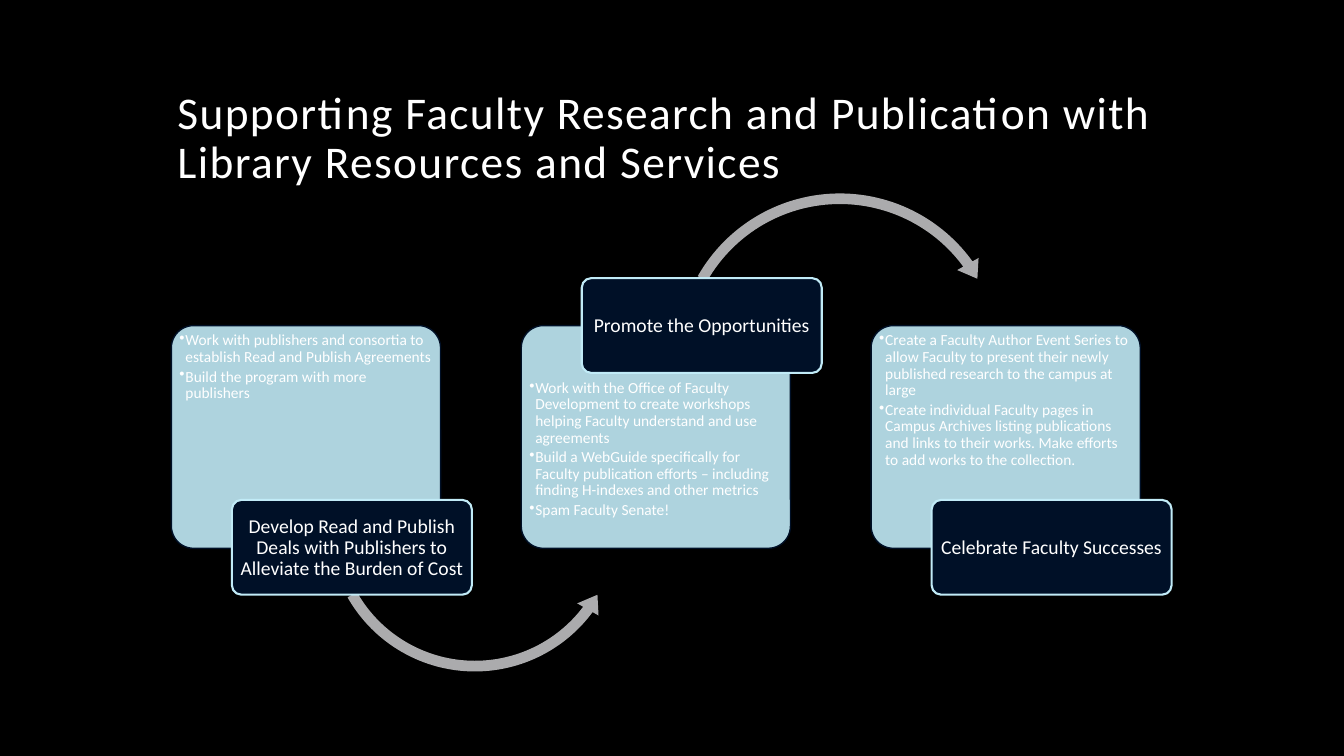
from lxml import etree
from pptx import Presentation
from pptx import util as u
from pptx.dml.color import RGBColor
from pptx.enum import shapes, text
from pptx.oxml.ns import qn

Shape = shapes.MSO_SHAPE
STEPS = [
    ("Develop Read and Publish Deals with Publishers to Alleviate the Burden of Cost",
     ["Work with publishers and consortia to establish Read and Publish Agreements",
      "Build the program with more publishers"],
     (Shape.LEFT_CIRCULAR_ARROW, (3.19, 3.69, 3.04, 3.04),
      (0.035, 4.277, 22.032, 90.245, 0.04))),
    ("Promote the Opportunities",
     ["Work with the Office of Faculty Development to create workshops helping "
      "Faculty understand and use agreements",
      "Build a WebGuide specifically for Faculty publication efforts – including "
      "finding H-indexes and other metrics",
      "Spam Faculty Senate!"],
     (Shape.CIRCULAR_ARROW, (6.64, 1.85, 3.38, 3.38),
      (0.031, 3.813, 194.431, 125.755, 0.036))),
    ("Celebrate Faculty Successes",
     ["Create a Faculty Author Event Series to allow Faculty to present their newly "
      "published research to the campus at large",
      "Create individual Faculty pages in Campus Archives listing publications and "
      "links to their works. Make efforts to add works to the collection."],
     None),
]


def color(code):
    return RGBColor.from_string(code)


class SlideBuilder:
    """Draw styled elements on the current slide."""

    font = "Calibri"
    white, navy, sky, gray = "FFFFFF", "001027", "C1EBF7", "ABABAD"

    def __init__(self, deck):
        self.page = deck.slides.add_slide(deck.slide_layouts[5])
        self.page.background.fill.solid()
        self.page.background.fill.fore_color.rgb = color("000000")

    def add_words(self, para, words, size):
        para.line_spacing = 0.9
        span = para.add_run()
        span.text = words
        span.font.name = self.font
        span.font.size = u.Pt(size)
        span.font.color.rgb = color(self.white)
        return span

    def title(self, words):
        box = self.page.shapes.title
        box.left, box.top, box.width, box.height = map(u.Inches, (1.66, 0.42, 10, 1.5))
        frame = box.text_frame
        frame.auto_size = text.MSO_AUTO_SIZE.NONE
        frame.vertical_anchor = text.MSO_ANCHOR.BOTTOM
        para = frame.paragraphs[0]
        para.alignment = text.PP_ALIGN.LEFT
        span = self.add_words(para, words, 32.4)
        span._r.get_or_add_rPr().set("spc", "100")

    def shape(self, kind, place, adjustments, fill, line=None, weight=1, alpha=None):
        box = self.page.shapes.add_shape(kind, *map(u.Inches, place))
        box.shadow.inherit = False
        for index, value in enumerate(adjustments):
            box.adjustments[index] = value
        box.fill.solid()
        box.fill.fore_color.rgb = color(fill)
        if alpha:
            tint = box._element.spPr.find(qn("a:solidFill"))[0]
            etree.SubElement(tint, qn("a:alpha")).set("val", str(alpha * 1000))
        if line:
            box.line.color.rgb = color(line)
            box.line.width = u.Pt(weight)
        else:
            box.line.fill.background()

    def frame(self, place, side):
        frame = self.page.shapes.add_textbox(*map(u.Inches, place)).text_frame
        frame.word_wrap = True
        frame.margin_left = frame.margin_right = u.Inches(side)
        frame.margin_top = frame.margin_bottom = u.Inches(0.02)
        return frame

    def card(self, left, list_top, items):
        self.shape(Shape.ROUNDED_RECTANGLE, (left, 3.23, 2.67, 2.21), [0.1],
                   self.sky, self.navy, alpha=90)
        frame = self.frame((left + 0.06, list_top, 2.57, 1.63), 0.02)
        for index, item in enumerate(items):
            para = frame.add_paragraph() if index else frame.paragraphs[0]
            para.level = 1
            props = para._p.get_or_add_pPr()
            props.set("marL", str(u.Inches(0.06)))
            props.set("indent", str(-u.Inches(0.06)))
            etree.SubElement(props, qn("a:buChar")).set("char", "•")
            para.space_after = u.Pt(2)
            self.add_words(para, item, 11)

    def label(self, left, top, words):
        self.shape(Shape.ROUNDED_RECTANGLE, (left, top, 2.38, 0.94), [0.1],
                   self.navy, self.sky, 1.5)
        frame = self.frame((left + 0.03, top + 0.03, 2.32, 0.89), 0.03)
        frame.vertical_anchor = text.MSO_ANCHOR.MIDDLE
        para = frame.paragraphs[0]
        para.alignment = text.PP_ALIGN.CENTER
        self.add_words(para, words, 14)

    def arrow(self, kind, place, adjustments):
        self.shape(kind, place, adjustments, self.gray)


def main():
    deck = Presentation()
    deck.slide_width, deck.slide_height = u.Inches(13.33), u.Inches(7.5)
    slide = SlideBuilder(deck)
    slide.title("Supporting Faculty Research and Publication with "
                "Library Resources and Services")
    for index, (heading, items, arrow) in enumerate(STEPS):
        left = 1.7 + 3.47 * index
        raised = index % 2 == 1
        slide.card(left, 3.75 if raised else 3.28, items)
        if arrow:
            slide.arrow(*arrow)
        slide.label(left + 0.6, 2.76 if raised else 4.96, heading)
    deck.save("out.pptx")


if __name__ == "__main__":
    main()
